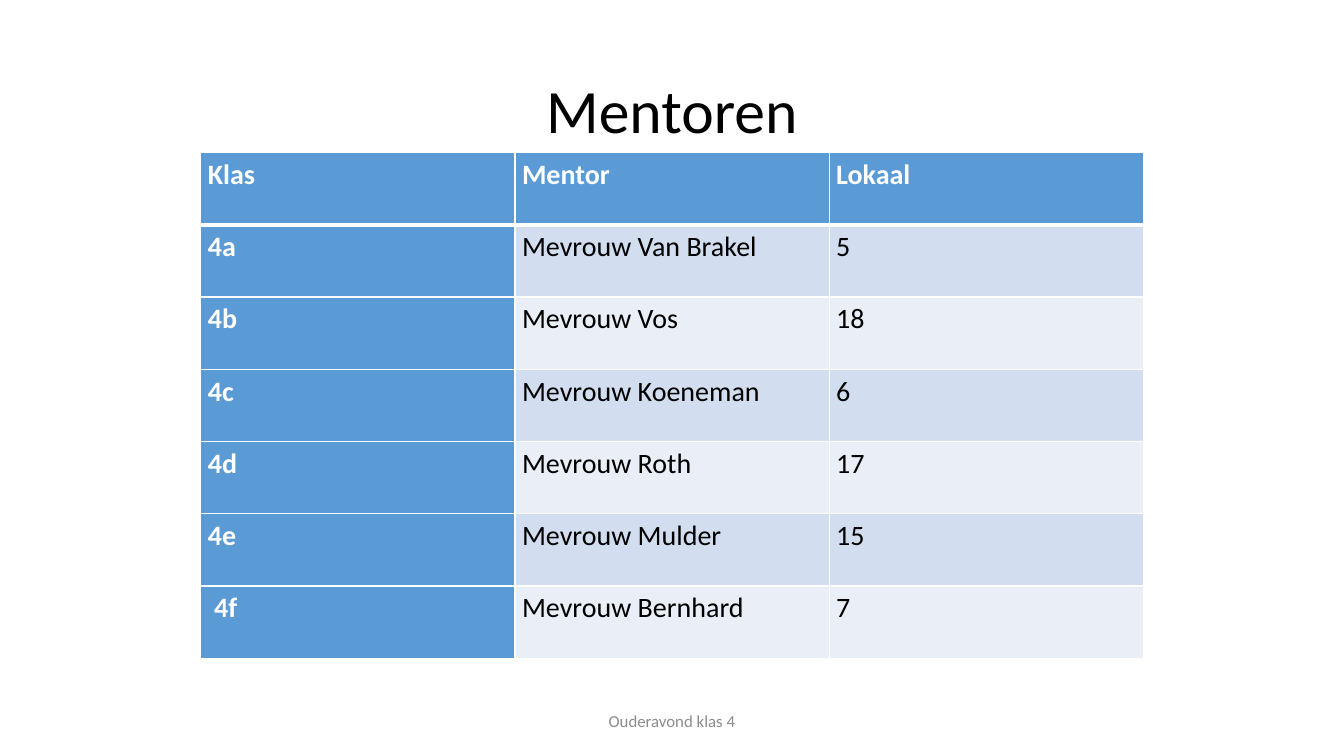
import pptx
import pptx.util
import pptx.dml.color
import pptx.enum.text
from dataclasses import dataclass
from lxml import etree

Pt = pptx.util.Pt
RGB = pptx.dml.color.RGBColor.from_string
ALIGN = pptx.enum.text.PP_ALIGN
ANCHOR = pptx.enum.text.MSO_ANCHOR


@dataclass(frozen=True)
class Theme:
    font: str = "Calibri"
    black: str = "000000"
    white: str = "FFFFFF"
    gray: str = "8C8C8C"
    blue: str = "5B9BD5"
    bands: tuple = ("D2DEEF", "EAEFF7")
    title: int = 44
    body: int = 20
    small: int = 12


THEME = Theme()

ROWS = [
    ("Klas", "Mentor", "Lokaal"),
    ("4a", "Mevrouw Van Brakel", "5"),
    ("4b", "Mevrouw Vos", "18"),
    ("4c", "Mevrouw Koeneman", "6"),
    ("4d", "Mevrouw Roth", "17"),
    ("4e", "Mevrouw Mulder", "15"),
    (" 4f", "Mevrouw Bernhard", "7"),
]


def apply(target, values):
    for name, value in values.items():
        setattr(target, name, value)


def write(para, text, size, color, bold=False, **layout):
    run = para.add_run()
    run.text = text
    apply(para, layout)
    apply(run.font, {"name": THEME.font, "size": Pt(size), "bold": bold})
    run.font.color.rgb = RGB(color)


def add_label(slide, box, text, size, color, **layout):
    frame = slide.shapes.add_textbox(*map(Pt, box)).text_frame
    apply(frame, {"word_wrap": True, "vertical_anchor": ANCHOR.MIDDLE})
    write(frame.paragraphs[0], text, size, color, alignment=ALIGN.CENTER, **layout)


def add_edges(cell, widths):
    """Draw white cell borders; widths maps a side (L, R, T, B) to points."""
    props = cell._tc.get_or_add_tcPr()
    space = pptx.oxml.ns.qn
    for side, width in widths.items():
        line = etree.SubElement(props, space(f"a:ln{side}"), w=str(Pt(width)))
        fill = etree.SubElement(line, space("a:solidFill"))
        etree.SubElement(fill, space("a:srgbClr"), val=THEME.white)


def fill_cell(cell, text, row, col):
    head = row == 0 or col == 0
    apply(cell, {"margin_left": Pt(5), "margin_right": Pt(5),
                 "margin_top": 0, "margin_bottom": 0})
    add_edges(cell, {"L": 1, "R": 1, "T": 3 if row == 1 else 1,
                     "B": 3 if row == 0 else 1})
    cell.fill.solid()
    cell.fill.fore_color.rgb = RGB(THEME.blue if head else THEME.bands[(row - 1) % 2])
    write(cell.text_frame.paragraphs[0], text, THEME.body,
          THEME.white if head else THEME.black, head,
          line_spacing=1.15, space_after=Pt(10))


def add_grid(slide, box, rows):
    left, top, width, height = map(Pt, box)
    table = slide.shapes.add_table(len(rows), len(rows[0]), left, top, width, height).table
    for row, texts in enumerate(rows):
        for col, text in enumerate(texts):
            fill_cell(table.cell(row, col), text, row, col)


def main():
    deck = pptx.Presentation()
    apply(deck, {"slide_width": Pt(960), "slide_height": Pt(540)})
    slide = deck.slides.add_slide(deck.slide_layouts[6])
    add_label(slide, (66, 28.75, 828, 104.4), "Mentoren", THEME.title, THEME.black,
              line_spacing=0.9)
    add_grid(slide, (143.5, 109, 673.2, 361.2), ROWS)
    add_label(slide, (318, 500.5, 324, 28.75), "Ouderavond klas 4", THEME.small, THEME.gray)
    deck.save("out.pptx")


if __name__ == "__main__":
    main()
